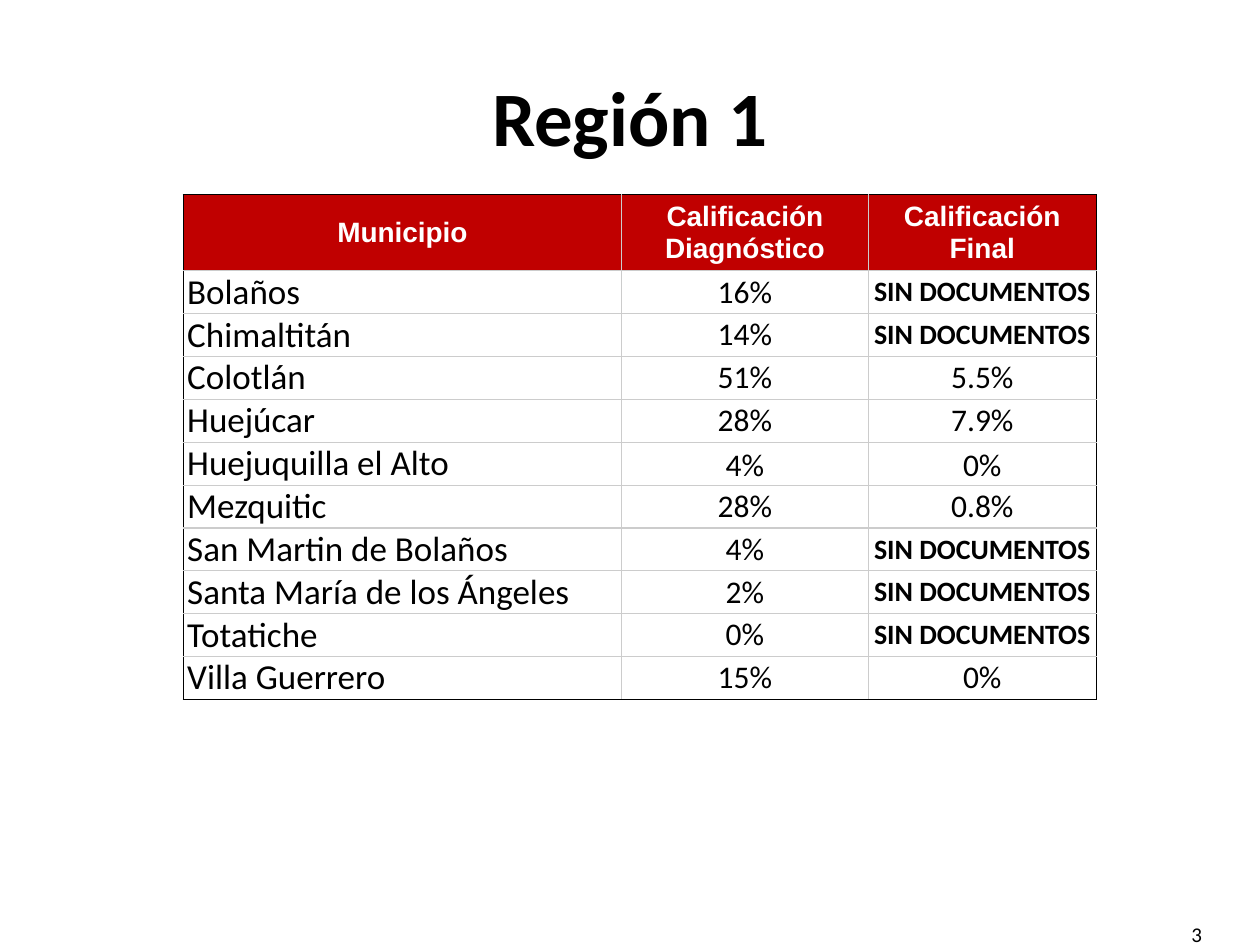
from dataclasses import dataclass

from lxml.etree import SubElement
from pptx import Presentation
from pptx.dml.color import RGBColor
from pptx.enum.text import MSO_ANCHOR, PP_ALIGN
from pptx.oxml.ns import qn
from pptx.util import Pt


@dataclass(frozen=True)
class Theme:
    black: str = "000000"
    white: str = "FFFFFF"
    red: str = "C00000"
    grid: str = "CCCCCC"
    body_font: str = "Calibri"
    header_font: str = "Arial"
    title_size: int = 44
    name_size: int = 20
    value_size: int = 18
    label_size: int = 16
    number_size: int = 12


THEME = Theme()
NO_DOCUMENTS = "SIN DOCUMENTOS"
HEADERS = ("Municipio", "Calificación Diagnóstico", "Calificación Final")
MUNICIPALITIES = (
    ("Bolaños", "16%", NO_DOCUMENTS),
    ("Chimaltitán", "14%", NO_DOCUMENTS),
    ("Colotlán", "51%", "5.5%"),
    ("Huejúcar", "28%", "7.9%"),
    ("Huejuquilla el Alto", "4%", "0%"),
    ("Mezquitic", "28%", "0.8%"),
    ("San Martin de Bolaños", "4%", NO_DOCUMENTS),
    ("Santa María de los Ángeles", "2%", NO_DOCUMENTS),
    ("Totatiche", "0%", NO_DOCUMENTS),
    ("Villa Guerrero", "15%", "0%"),
)
BOTTOM_ALIGNED_ROW = 5
COLUMN_WIDTHS = (250.4, 141, 130.3)
HEADER_HEIGHT = 43.5
ROW_HEIGHT = 24.5


def write_text(text_frame, text, size, alignment, bold=False,
               font_name=THEME.body_font, color=THEME.black):
    paragraph = text_frame.paragraphs[0]
    paragraph.alignment = alignment
    run = paragraph.add_run()
    run.text = text
    run.font.size = Pt(size)
    run.font.name = font_name
    run.font.bold = bold
    run.font.color.rgb = RGBColor.from_string(color)


def add_label(slide, box, text, size, alignment, bold=False):
    text_frame = slide.shapes.add_textbox(*map(Pt, box)).text_frame
    text_frame.word_wrap = True
    text_frame.vertical_anchor = MSO_ANCHOR.MIDDLE
    write_text(text_frame, text, size, alignment, bold)


def set_borders(cell, outer_sides):
    """Draw black lines on the table's outer sides and grey lines elsewhere."""
    properties = cell._tc.get_or_add_tcPr()
    for side in "LRTB":
        outer = side in outer_sides
        width = Pt(1) if outer else Pt(0.75)
        line = SubElement(properties, qn(f"a:ln{side}"), w=str(width))
        fill = SubElement(line, qn("a:solidFill"))
        SubElement(fill, qn("a:srgbClr"), val=THEME.black if outer else THEME.grid)


def format_cell(cell, outer_sides, fill_color, anchor):
    set_borders(cell, outer_sides)
    cell.fill.solid()
    cell.fill.fore_color.rgb = RGBColor.from_string(fill_color)
    cell.vertical_anchor = anchor
    cell.margin_left = cell.margin_right = Pt(2.2)
    cell.margin_top = cell.margin_bottom = 0


def write_cell(cell, text, row, column):
    if row == 0:
        write_text(cell.text_frame, text, THEME.label_size, PP_ALIGN.CENTER,
                   True, THEME.header_font, THEME.white)
    elif column == 0:
        write_text(cell.text_frame, text, THEME.name_size, PP_ALIGN.LEFT)
    else:
        missing = text == NO_DOCUMENTS
        size = THEME.label_size if missing else THEME.value_size
        write_text(cell.text_frame, text, size, PP_ALIGN.CENTER, missing)


def add_grades_table(slide, left, top):
    rows = (HEADERS, *MUNICIPALITIES)
    heights = [HEADER_HEIGHT] + [ROW_HEIGHT] * len(MUNICIPALITIES)
    table = slide.shapes.add_table(
        len(rows), len(HEADERS), Pt(left), Pt(top),
        Pt(sum(COLUMN_WIDTHS)), Pt(sum(heights))).table
    table.horz_banding = False
    for column, width in zip(table.columns, COLUMN_WIDTHS):
        column.width = Pt(width)
    for row, height in zip(table.rows, heights):
        row.height = Pt(height)

    last_row, last_column = len(rows) - 1, len(HEADERS) - 1
    for row, texts in enumerate(rows):
        for column, text in enumerate(texts):
            cell = table.cell(row, column)
            at_edge = {"L": column == 0, "R": column == last_column,
                       "T": row == 0, "B": row == last_row}
            format_cell(
                cell, [side for side, outer in at_edge.items() if outer],
                THEME.red if row == 0 else THEME.white,
                MSO_ANCHOR.BOTTOM if row == BOTTOM_ALIGNED_ROW else MSO_ANCHOR.MIDDLE)
            write_cell(cell, text, row, column)


def main():
    presentation = Presentation()
    presentation.slide_width, presentation.slide_height = Pt(720), Pt(540)
    slide = presentation.slides.add_slide(presentation.slide_layouts[6])
    add_label(slide, (666, 519, 28, 29), "3", THEME.number_size, PP_ALIGN.RIGHT)
    add_grades_table(slide, 104.8, 111.3)
    add_label(slide, (36, 21, 648, 90), "Región 1", THEME.title_size,
              PP_ALIGN.CENTER, bold=True)
    presentation.save("out.pptx")


if __name__ == "__main__":
    main()
